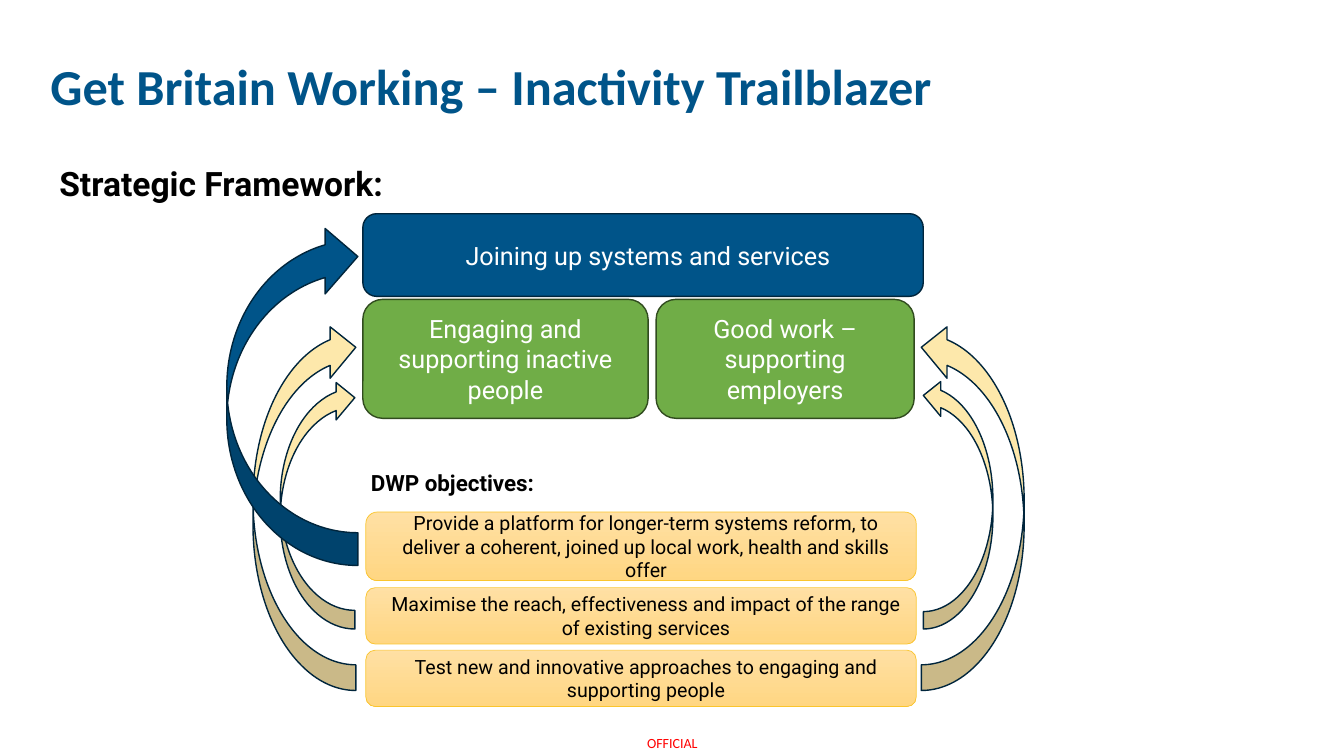
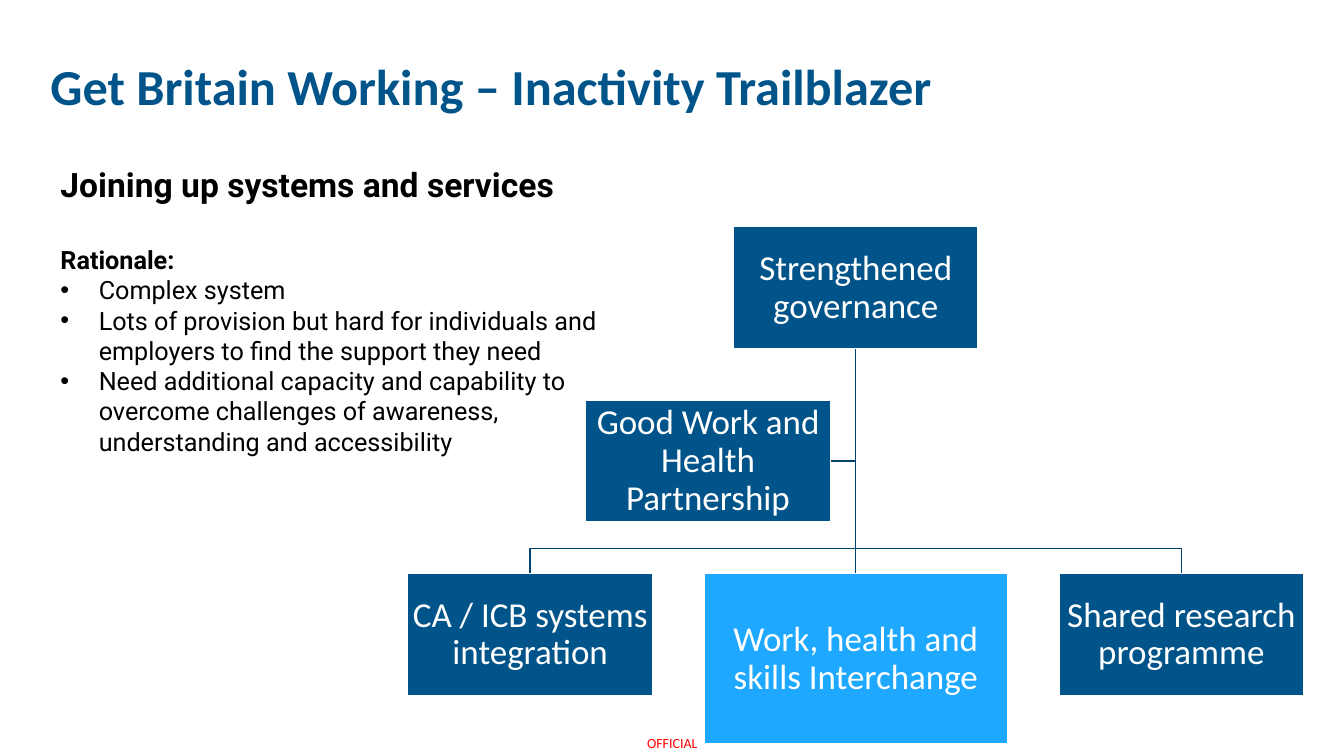
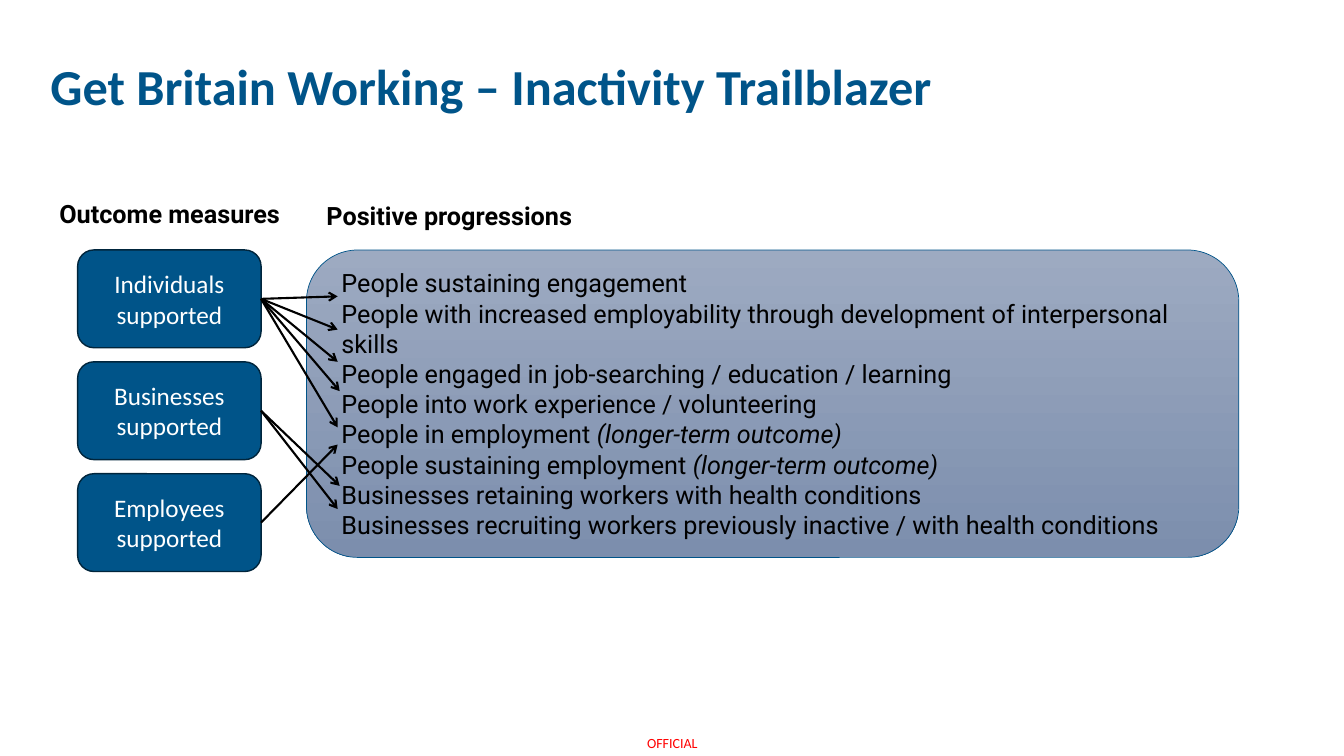
import lxml.etree
import pptx
import pptx.dml.color
import pptx.enum.dml
import pptx.enum.shapes
import pptx.enum.text
import pptx.oxml.ns
import pptx.util

Inches = pptx.util.Inches
Pt = pptx.util.Pt
SHAPE = pptx.enum.shapes.MSO_SHAPE
ALIGN = pptx.enum.text.PP_ALIGN
ANCHOR = pptx.enum.text.MSO_ANCHOR
qn = pptx.oxml.ns.qn

COLORS = {
    "navy": "005489", "navy_edge": "00253C", "navy_line": "00436E", "sky": "1FA8FF",
    "green": "70AD47", "green_edge": "314C1F", "cream": "FDE8AB",
    "gold_top": "FFE0A4", "gold_bottom": "FFD682", "gold_edge": "FAC52D",
    "slate_top": "9DAAC1", "slate_bottom": "7C8EAD",
    "white": "FFFFFF", "black": "000000", "red": "FF0000",
}
TITLE = "Get Britain Working – Inactivity Trailblazer"
MARKING = "OFFICIAL"

PILLARS = [
    ("Joining up systems and services", (3.6, 2.12, 5.56, 0.82), "navy", 0.1),
    ("Good work – supporting employers", (6.51, 2.97, 2.56, 1.18), "green", 0),
    ("Engaging and supporting inactive people", (3.6, 2.97, 2.83, 1.18), "green", 0),
]
OBJECTIVES = [
    ("Provide a platform for longer-term systems reform, to deliver a coherent, "
     "joined up local work, health and skills offer", 5.08, 0.68),
    ("Maximise the reach, effectiveness and impact of the range of existing services", 5.83, 0.56),
    ("Test new and innovative approaches to engaging and supporting people", 6.45, 0.56),
]
FRAMEWORK_ARROWS = [
    ((2.78, 3.76, 0.74, 2.48), "cream", False),
    ((2.51, 3.19, 1.02, 3.66), "cream", False),
    ((9.16, 3.75, 0.69, 2.49), "cream", True),
    ((9.14, 3.19, 1.02, 3.66), "cream", True),
    ((2.25, 2.22, 1.3, 3.39), "navy", False),
]

RATIONALE = [
    "Complex system",
    "Lots of provision but hard for individuals and employers to find the support they need",
    "Need additional capacity and capability to overcome challenges of awareness, "
    "understanding and accessibility",
]
TRUNK_X, BRANCH_Y, LEAF_Y = 8.49, 5.44, 5.69
UNIT_W, UNIT_H = 2.43, 1.21
LEAF_PITCH = 3.23
GOVERNANCE = ("Strengthened governance", 2.25)
PARTNERSHIP = ("Good Work and Health Partnership", 5.81, 3.97)
LEAVES = [
    ("CA / ICB systems integration", UNIT_W, UNIT_H, "navy"),
    ("Work, health and skills Interchange", 3.01, 1.69, "sky"),
    ("Shared research programme", UNIT_W, UNIT_H, "navy"),
]

MEASURES = [
    ("Individuals supported", [(3.35, 2.94), (3.35, 3.27), (3.35, 3.59), (3.37, 3.88), (3.35, 4.24)]),
    ("Businesses supported", [(3.37, 4.82), (3.35, 5.05)]),
    ("Employees supported", [(3.35, 4.41)]),
]
PROGRESSIONS = [
    "People sustaining engagement",
    "People with increased employability through development of interpersonal skills",
    "People engaged in job-searching / education / learning",
    "People into work experience / volunteering",
    ("People in employment ", "(longer-term outcome)"),
    ("People sustaining employment ", "(longer-term outcome)"),
    "Businesses retaining workers with health conditions",
    "Businesses recruiting workers previously inactive / with health conditions",
]


def rgb(name):
    return pptx.dml.color.RGBColor.from_string(COLORS[name])


def write(frame, paragraphs, size=18, font="Roboto", color="black", bold=False, align=ALIGN.LEFT,
          anchor=None, inset=None, left=0, bullet=None, before=0, spacing=1.0):
    frame.word_wrap = True
    frame.auto_size = pptx.enum.text.MSO_AUTO_SIZE.NONE
    if anchor is not None:
        frame.vertical_anchor = anchor
    if inset is not None:
        frame.margin_left = frame.margin_right = Inches(inset)
        frame.margin_top = frame.margin_bottom = Inches(inset)
    for content in paragraphs:
        paragraph = frame.add_paragraph() if frame.text else frame.paragraphs[0]
        paragraph.alignment = align
        paragraph.line_spacing = spacing
        paragraph.space_before = Pt(before)
        properties = paragraph._p.get_or_add_pPr()
        properties.set("marL", str(Inches(left)))
        properties.set("indent", str(-Inches(left) if bullet else 0))
        if bullet:
            lxml.etree.SubElement(properties, qn("a:buChar")).set("char", bullet)
        else:
            lxml.etree.SubElement(properties, qn("a:buNone"))
        runs = (content,) if isinstance(content, str) else content
        for index, text in enumerate(runs):
            run = paragraph.add_run()
            run.text = text
            run.font.size = Pt(size)
            run.font.name = font
            run.font.bold = bold
            run.font.italic = index == 1
            run.font.color.rgb = rgb(color)


def place(shape, box):
    shape.left, shape.top, shape.width, shape.height = map(Inches, box)


def label(slide, text, box, **style):
    write(slide.shapes.add_textbox(*map(Inches, box)).text_frame, [text], **style)


def panel(slide, kind, box, fill, edge, width=1):
    shape = slide.shapes.add_shape(kind, *map(Inches, box))
    shape.shadow.inherit = False
    if isinstance(fill, tuple):
        shape.fill.gradient()
        shape.fill.gradient_angle = 270
        for stop, name in zip(shape.fill.gradient_stops, fill):
            stop.color.rgb = rgb(name)
    else:
        shape.fill.solid()
        shape.fill.fore_color.rgb = rgb(fill)
    shape.line.color.rgb = rgb(edge)
    shape.line.width = Pt(width)
    return shape


def line(slide, start, end, color, width, arrow=False):
    connector = slide.shapes.add_connector(
        pptx.enum.shapes.MSO_CONNECTOR.STRAIGHT, *map(Inches, start + end))
    connector.line.color.rgb = rgb(color)
    connector.line.width = Pt(width)
    if arrow:
        lxml.etree.SubElement(connector.line._get_or_add_ln(), qn("a:tailEnd")).set("type", "arrow")
    lxml.etree.SubElement(connector._element.spPr, qn("a:effectLst"))


def bent_line(slide, points, color, width):
    corners = [tuple(map(Inches, point)) for point in points]
    builder = slide.shapes.build_freeform(*corners[0])
    builder.add_line_segments(corners[1:], close=False)
    shape = builder.convert_to_shape()
    shape.shadow.inherit = False
    shape.fill.background()
    shape.line.color.rgb = rgb(color)
    shape.line.width = Pt(width)


def add_slide(deck, layout):
    slide = deck.slides.add_slide(deck.slide_layouts[layout])
    place(slide.shapes.title, (0.4, 0.5, 12.29, 1.65))
    write(slide.shapes.title.text_frame, [TITLE], size=36, font="Calibri", color="navy",
          bold=True, anchor=ANCHOR.TOP)
    return slide


def add_marking(deck, slide):
    marking = slide.shapes.add_textbox(*map(Inches, (6.27, 7.22, 0.8, 0.29)))
    write(marking.text_frame, [MARKING], size=10, font="Calibri", color="red",
          align=ALIGN.CENTER, anchor=ANCHOR.MIDDLE, inset=0)
    deck.slide_master.element.cSld.spTree.append(marking.element)


def framework(slide):
    label(slide, "Strategic Framework:", (0.49, 1.57, 11.64, 0.5), size=24, bold=True)
    for text, box, fill, left in PILLARS:
        pillar = panel(slide, SHAPE.ROUNDED_RECTANGLE, box, fill, fill + "_edge")
        write(pillar.text_frame, [text], color="white", align=ALIGN.CENTER,
              anchor=ANCHOR.MIDDLE, left=left)
    for text, top, height in OBJECTIVES:
        objective = panel(slide, SHAPE.FLOWCHART_ALTERNATE_PROCESS, (3.63, top, 5.46, height),
                          ("gold_top", "gold_bottom"), "gold_edge", 0.5)
        write(objective.text_frame, [text], size=14, align=ALIGN.CENTER,
              anchor=ANCHOR.MIDDLE, left=0.1)
    for box, fill, flipped in FRAMEWORK_ARROWS:
        arrow = panel(slide, SHAPE.CURVED_LEFT_ARROW, box, fill, "navy_edge")
        arrow.rotation = 180
        if flipped:
            arrow.element.spPr.find(qn("a:xfrm")).set("flipH", "1")
    label(slide, "DWP objectives:", (3.58, 4.61, 2.39, 0.37), size=16, bold=True)


def unit(slide, text, box, fill="navy"):
    write(panel(slide, SHAPE.RECTANGLE, box, fill, "white").text_frame, [text], size=25,
          font="Calibri", color="white", align=ALIGN.CENTER, anchor=ANCHOR.MIDDLE,
          inset=0.02, spacing=0.9)


def structure(slide):
    body = slide.placeholders[1]
    place(body, (0.5, 1.58, 5.58, 4.95))
    write(body.text_frame, ["Joining up systems and services"], size=24, bold=True,
          anchor=ANCHOR.TOP)
    write(body.text_frame, ["Rationale:"], bold=True, before=28.5)
    write(body.text_frame, RATIONALE, left=0.38, bullet="•")

    governance, governance_top = GOVERNANCE
    partnership, partnership_left, partnership_top = PARTNERSHIP
    stub_y = partnership_top + UNIT_H / 2
    leaf_centers = [TRUNK_X + LEAF_PITCH * (index - 1) for index in range(len(LEAVES))]
    trunk_top = (TRUNK_X, governance_top + UNIT_H)
    bent_line(slide, [trunk_top, (TRUNK_X, stub_y), (partnership_left + UNIT_W, stub_y)],
              "navy_line", 1)
    for x in leaf_centers:
        if x == TRUNK_X:
            line(slide, trunk_top, (x, LEAF_Y), "navy_line", 1)
        else:
            bent_line(slide, [trunk_top, (TRUNK_X, BRANCH_Y), (x, BRANCH_Y), (x, LEAF_Y)],
                      "navy_line", 1)
    unit(slide, governance, (TRUNK_X - UNIT_W / 2, governance_top, UNIT_W, UNIT_H))
    unit(slide, partnership, (partnership_left, partnership_top, UNIT_W, UNIT_H))
    for center, (text, width, height, fill) in zip(leaf_centers, LEAVES):
        unit(slide, text, (center - width / 2, LEAF_Y, width, height), fill)


def outcomes(slide):
    label(slide, "Outcome measures", (0.49, 1.92, 2.55, 0.4), bold=True)
    label(slide, "Positive progressions", (3.14, 1.94, 3.85, 0.4), bold=True)
    progressions = panel(slide, SHAPE.ROUNDED_RECTANGLE, (3.04, 2.48, 9.25, 3.05),
                         ("slate_top", "slate_bottom"), "navy", 0.5)
    write(progressions.text_frame, PROGRESSIONS, anchor=ANCHOR.MIDDLE, left=0.1)
    left, top, width, height, gap = 0.77, 2.48, 1.82, 0.97, 0.14
    for index, (text, targets) in enumerate(MEASURES):
        y = top + index * (height + gap)
        measure = panel(slide, SHAPE.ROUNDED_RECTANGLE, (left, y, width, height),
                        "navy", "navy_edge")
        write(measure.text_frame, [text], font="Calibri", color="white",
              align=ALIGN.CENTER, anchor=ANCHOR.MIDDLE)
        for target in targets:
            line(slide, (left + width, y + height / 2), target, "black", 1.5, arrow=True)


def main():
    deck = pptx.Presentation()
    deck.slide_width, deck.slide_height = Inches(40) // 3, Inches(7.5)
    first = add_slide(deck, 5)
    add_marking(deck, first)
    framework(first)
    structure(add_slide(deck, 1))
    outcomes(add_slide(deck, 5))
    deck.save("out.pptx")


if __name__ == "__main__":
    main()
